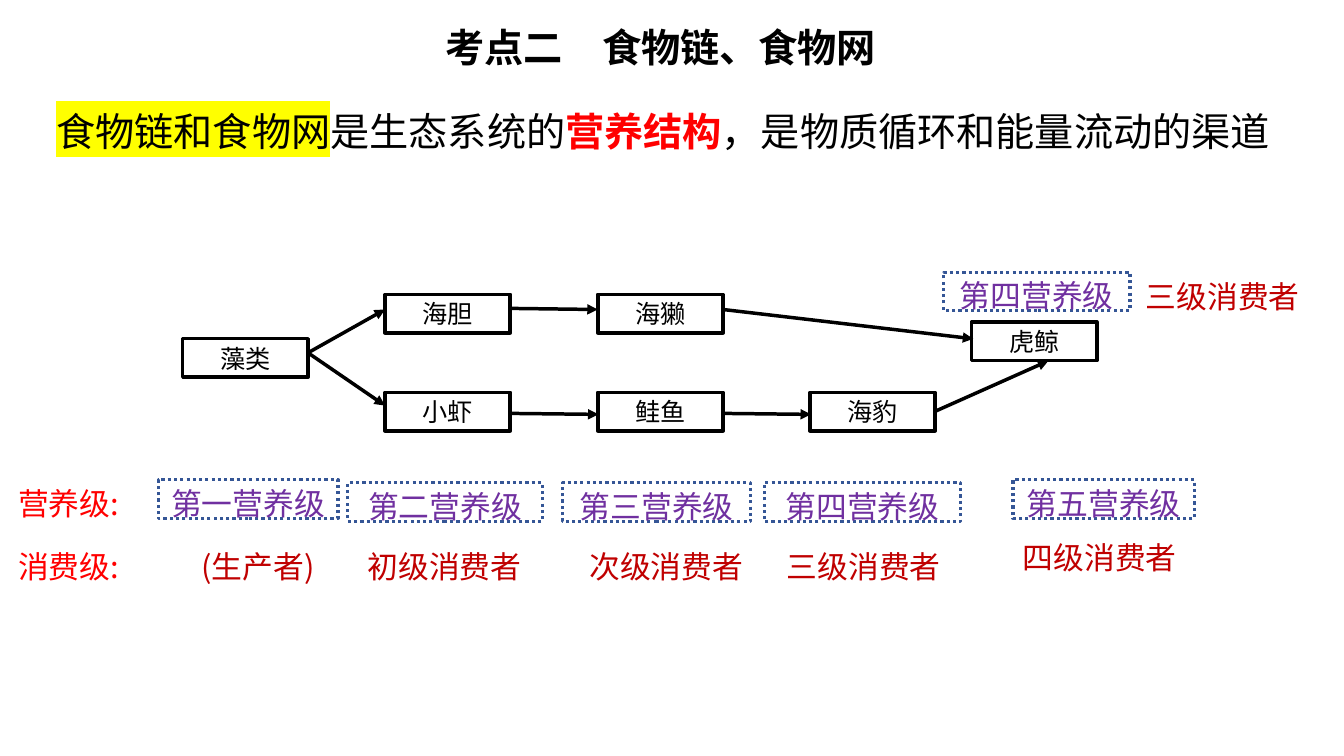
import pptx
import pptx.util
import pptx.dml.color
import pptx.enum.dml
import pptx.enum.shapes
import pptx.enum.text
import pptx.oxml
import pptx.oxml.ns

Pt = pptx.util.Pt
RGB = pptx.dml.color.RGBColor
ALIGN = pptx.enum.text.PP_ALIGN
ANCHOR = pptx.enum.text.MSO_ANCHOR
DASH = pptx.enum.dml.MSO_LINE
BLACK, WHITE = RGB(0, 0, 0), RGB(255, 255, 255)
RED, CRIMSON = RGB(255, 0, 0), RGB(0xC0, 0, 0)
PURPLE, BLUE = RGB(0x70, 0x30, 0xA0), RGB(0x35, 0x56, 0x96)
YELLOW = RGB(255, 255, 0)
FACE = "Noto Sans CJK SC"

TITLE = "考点二　食物链、食物网"
# text, colour, bold, highlight
LEAD = [
    ("食物链和食物网", BLACK, False, YELLOW),
    ("是生态系统的", BLACK, False, None),
    ("营养结构", RED, True, None),
    ("，是物质循环和能量流动的渠道", BLACK, False, None),
]
# species: left, top
FOODS = {
    "藻类": (130.5, 242),
    "海胆": (275, 210.3),
    "小虾": (275, 280.3),
    "海獭": (427, 210.3),
    "鲑鱼": (427, 280.3),
    "海豹": (578.5, 280.3),
    "虎鲸": (694, 230),
}
# eaten, eater, start below box top, end from the eater's top left corner
ARROWS = [
    ("藻类", "海胆", 10, (0, 10.8)),
    ("藻类", "小虾", 10, (0, 9.4)),
    ("海胆", "海獭", 10, (0, 10.8)),
    ("小虾", "鲑鱼", 15, (0.5, 15.7)),
    ("海獭", "虎鲸", 10.8, (1.2, 12)),
    ("鲑鱼", "海豹", 15, (0.8, 15.7)),
    ("海豹", "虎鲸", 13.5, (54.8, 27.8)),
]
# trophic level: left, top, width
LEVELS = [
    ("第一营养级", 113, 342.7, 128.5),
    ("第二营养级", 248.4, 344.9, 139),
    ("第三营养级", 401.8, 344.9, 134.6),
    ("第四营养级", 545.8, 344.9, 140.4),
    ("第五营养级", 723.6, 342.7, 129.6),
    ("第四营养级", 674, 194.4, 133.2),
]
# label: left, top, width, colour
LABELS = [
    ("营养级:", 5.8, 342.7, 111.6, RED),
    ("消费级:", 5.8, 388, 111.6, RED),
    ("(生产者)", 136.8, 388, 111.6, CRIMSON),
    ("初级消费者", 255.6, 388, 130.3, CRIMSON),
    ("次级消费者", 414, 387.4, 135.4, CRIMSON),
    ("三级消费者", 555, 388, 136, CRIMSON),
    ("四级消费者", 723.6, 381.6, 137.5, CRIMSON),
    ("三级消费者", 811.4, 195, 136.8, CRIMSON),
]
BOX_W, BOX_H = 89.5, 27.5


def child(node, tag, **attrs):
    item = pptx.oxml.parse_xml(f"<a:{tag} {pptx.oxml.ns.nsdecls('a')}/>")
    for key, value in attrs.items():
        item.set(key, value)
    node.append(item)
    return item


def style(run, size, color, bold=False, mark=None):
    font = run.font
    font.size, font.bold = Pt(size), bold
    font.color.rgb = color
    props = run._r.get_or_add_rPr()
    if mark is not None:
        child(child(props, "highlight"), "srgbClr", val=str(mark))
    child(props, "latin", typeface=FACE)
    child(props, "ea", typeface=FACE)


def place(shape, left, top, width, height):
    shape.left, shape.top = Pt(left), Pt(top)
    shape.width, shape.height = Pt(width), Pt(height)


def box(text, area, size, color, edge, weight, anchor, dash=None):
    shape = slide.shapes.add_shape(
        pptx.enum.shapes.MSO_SHAPE.RECTANGLE, *map(Pt, area))
    shape.shadow.inherit = False
    shape.fill.solid()
    shape.fill.fore_color.rgb = WHITE
    shape.line.color.rgb = edge
    shape.line.width = Pt(weight)
    if dash is not None:
        shape.line.dash_style = dash
    frame = shape.text_frame
    frame.text = text
    frame.vertical_anchor = anchor
    para = frame.paragraphs[0]
    para.alignment = ALIGN.CENTER
    style(para.runs[0], size, color)


def arrow(start, end):
    line = slide.shapes.add_connector(
        pptx.enum.shapes.MSO_CONNECTOR.STRAIGHT, *map(Pt, start + end))
    line.line.color.rgb = BLACK
    line.line.width = Pt(2.5)
    child(line.line._get_or_add_ln(), "tailEnd", type="triangle")
    child(line._element.spPr, "effectLst")


deck = pptx.Presentation()
deck.slide_width, deck.slide_height = Pt(960), Pt(540)
slide = deck.slides.add_slide(deck.slide_layouts[1])

title, lead = slide.placeholders
place(title, 311, 13, 349.2, 41)
place(lead, 33.1, 72.7, 888.5, 41)
title.text_frame.text = TITLE
style(title.text_frame.paragraphs[0].runs[0], 28, BLACK, True)

para = lead.text_frame.paragraphs[0]
for text, color, bold, mark in LEAD:
    run = para.add_run()
    run.text = text
    style(run, 28, color, bold, mark)
props = para._p.get_or_add_pPr()
props.set("marL", "0")
props.set("indent", "0")
para.space_before = Pt(0)
child(props, "buNone")

for holder in (title, lead):
    frame = holder.text_frame
    frame.auto_size = pptx.enum.text.MSO_AUTO_SIZE.NONE
    frame.vertical_anchor = ANCHOR.TOP
    frame.paragraphs[0].alignment = ALIGN.LEFT

for name, (left, top) in FOODS.items():
    box(name, (left, top, BOX_W, BOX_H), 18, BLACK, BLACK, 2.5, ANCHOR.MIDDLE)

for eaten, eater, drop, (dx, dy) in ARROWS:
    left, top = FOODS[eaten]
    x, y = FOODS[eater]
    arrow((left + BOX_W, top + drop), (x + dx, y + dy))

for name, left, top, width in LEVELS:
    box(name, (left, top, width, BOX_H), 22, PURPLE, BLUE, 2.25,
        ANCHOR.TOP, DASH.ROUND_DOT)

for text, left, top, width, color in LABELS:
    label = slide.shapes.add_textbox(Pt(left), Pt(top), Pt(width), Pt(33.8))
    label.text_frame.word_wrap = True
    label.text_frame.text = text
    style(label.text_frame.paragraphs[0].runs[0], 22, color)

deck.save("out.pptx")
